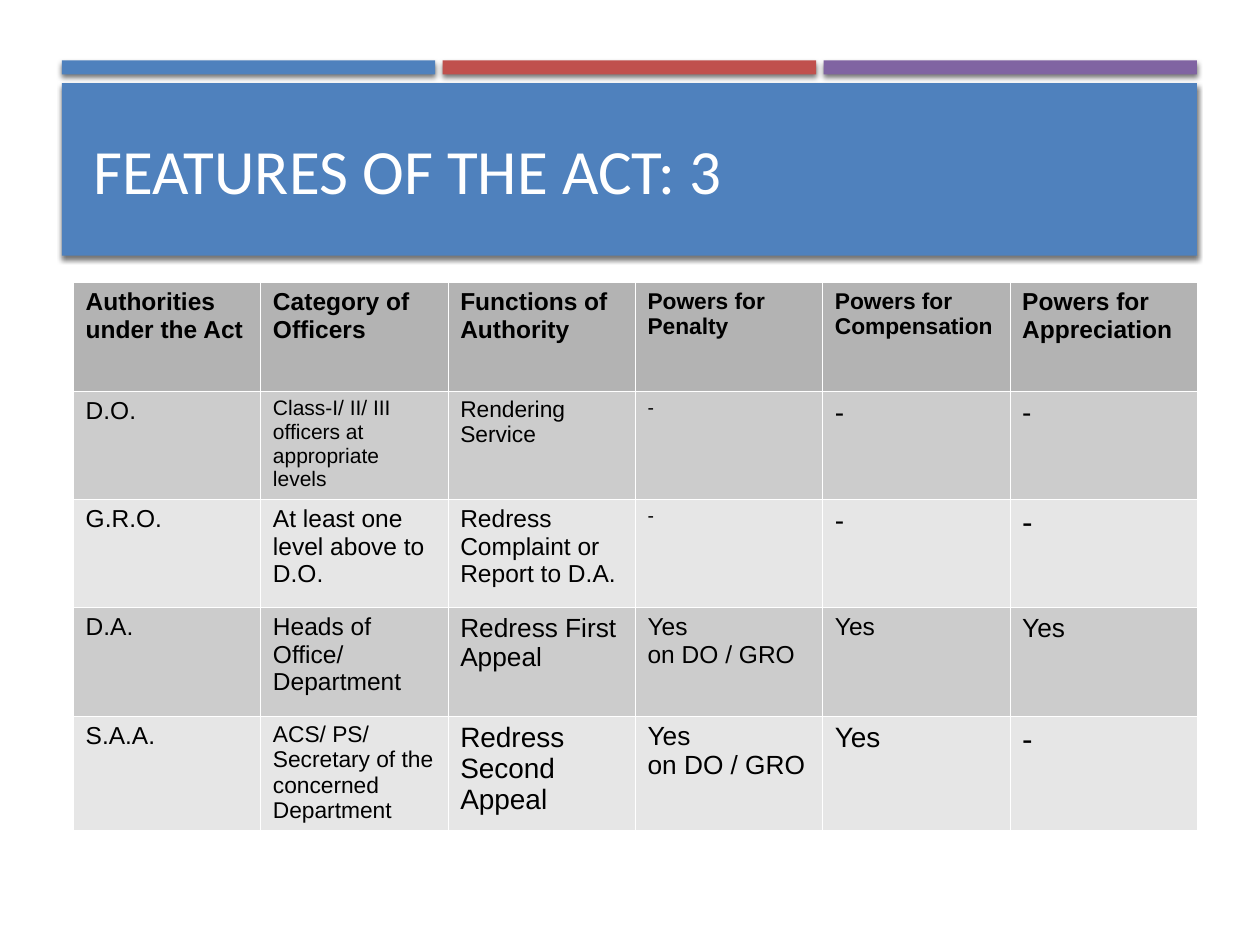
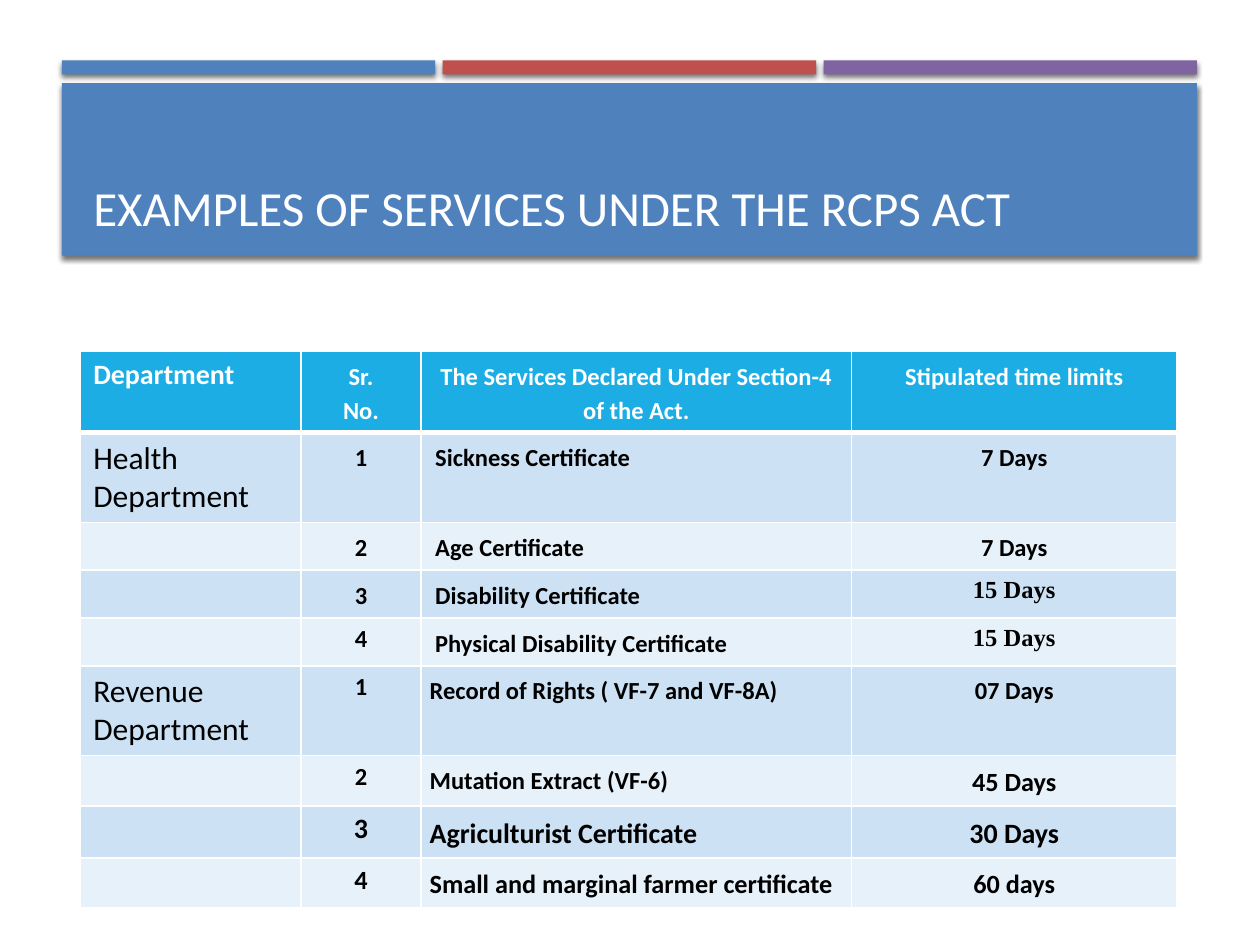
from lxml import etree
from pptx import Presentation
from pptx.dml.color import RGBColor
from pptx.enum.shapes import MSO_SHAPE
from pptx.enum.text import MSO_ANCHOR, MSO_AUTO_SIZE, PP_ALIGN
from pptx.oxml.ns import qn
from pptx.util import Inches, Pt

RECTANGLE = MSO_SHAPE.RECTANGLE
MIDDLE, BOTTOM = MSO_ANCHOR.MIDDLE, MSO_ANCHOR.BOTTOM
LEFT, CENTER = PP_ALIGN.LEFT, PP_ALIGN.CENTER
NO_AUTOFIT = MSO_AUTO_SIZE.NONE

WHITE = RGBColor(0xFF, 0xFF, 0xFF)
BLACK = RGBColor(0, 0, 0)
BLUE = RGBColor(0x4F, 0x81, 0xBD)
RED = RGBColor(0xC0, 0x50, 0x4D)
PURPLE = RGBColor(0x80, 0x64, 0xA2)
HEADER_GREY = RGBColor(0xB3, 0xB3, 0xB3)
DARK_GREY = RGBColor(0xCC, 0xCC, 0xCC)
LIGHT_GREY = RGBColor(0xE6, 0xE6, 0xE6)
HEADER_SKY = RGBColor(0x1C, 0xAD, 0xE4)
DARK_SKY = RGBColor(0xCC, 0xE2, 0xF4)
LIGHT_SKY = RGBColor(0xE7, 0xF1, 0xF9)

SANS, BODY, SERIF = "Arial", "Calibri", "Times New Roman"
TITLE_ONLY = 5
HEADER_BOX = (0.49, 0.48, 9.01, 1.55)
BAR_HEIGHT, BAR_GAP, BAND_OFFSET = 0.11, 0.06, 0.18

AUTHORITIES = [
    [("Authorities under the Act", 14), ("Category of Officers", 14),
     ("Functions of Authority", 14), ("Powers for Penalty", 13),
     ("Powers for Compensation", 13), ("Powers for Appreciation", 14)],
    [("D.O.", 14), ("Class-I/ II/ III officers at appropriate levels", 12),
     ("Rendering Service", 13), ("-", 11), ("-", 16), ("-", 16)],
    [("G.R.O.", 14), ("At least one level above to D.O.", 14),
     ("Redress Complaint or Report to D.A.", 14), ("-", 11), ("-", 16), ("-", 18)],
    [("D.A.", 14), ("Heads of Office/ Department", 14),
     ("Redress First Appeal", 15), ("Yes\non DO / GRO", 14), ("Yes", 14), ("Yes", 15)],
    [("S.A.A.", 14), ("ACS/ PS/ Secretary of the concerned Department", 13),
     ("Redress Second Appeal", 16), ("Yes\non DO / GRO", 15), ("Yes", 16), ("-", 18)],
]

SERVICES = [
    [("Department", 16), ("Sr.\nNo.", 14),
     ("The Services Declared Under Section-4 of the Act.", 14),
     ("Stipulated time limits", 14)],
    [("Health Department", 18), ("1", 14), (" Sickness Certificate", 14), ("7 Days", 14)],
    [("", 14), ("2", 14), (" Age Certificate", 14), ("7 Days", 14)],
    [("", 14), ("3", 14), (" Disability Certificate", 14), ("15 Days", 14)],
    [("", 14), ("4", 14), (" Physical Disability Certificate", 14), ("15 Days", 14)],
    [("Revenue Department", 18), ("1", 14),
     ("Record of Rights ( VF-7 and VF-8A)", 14), ("07 Days", 14)],
    [("", 14), ("2", 14), ("Mutation Extract (VF-6)", 14), ("45 Days", 15)],
    [("", 14), ("3", 16), ("Agriculturist Certificate", 16), ("30 Days", 16)],
    [("", 14), ("4", 15), ("Small and marginal farmer certificate", 15), ("60 days", 15)],
]


def add_band(slide, box, color):
    band = slide.shapes.add_shape(RECTANGLE, *map(Inches, box))
    band.shadow.inherit = False
    band.fill.solid()
    band.fill.fore_color.rgb = color
    band.line.fill.background()
    effects = band._element.spPr.find(qn("a:effectLst"))
    shadow = etree.SubElement(effects, qn("a:outerShdw"), blurRad=str(Pt(3)),
                              dist=str(Pt(2)), dir="5400000", rotWithShape="0")
    black = etree.SubElement(shadow, qn("a:srgbClr"), val=str(BLACK))
    etree.SubElement(black, qn("a:alpha"), val="55000")


def add_header(slide, box, heading, size, anchor):
    left, top, width, height = box
    accents = (BLUE, RED, PURPLE)
    bar_width = (width - BAR_GAP * (len(accents) - 1)) / len(accents)
    for index, color in enumerate(accents):
        bar_left = left + index * (bar_width + BAR_GAP)
        add_band(slide, (bar_left, top, bar_width, BAR_HEIGHT), color)
    add_band(slide, (left, top + BAND_OFFSET, width, height - BAND_OFFSET), BLUE)

    title = slide.shapes.title
    slide.shapes._spTree.append(title._element)
    title.left, title.top = Inches(left + 0.15), Inches(top + 0.27)
    title.width, title.height = Inches(width - 0.28), Inches(height - 0.37)
    frame = title.text_frame
    frame.text = heading
    frame.word_wrap = True
    frame.auto_size = NO_AUTOFIT
    frame.vertical_anchor = anchor
    paragraph = frame.paragraphs[0]
    paragraph.alignment = LEFT
    style_run(paragraph.runs[0], size, BODY, WHITE, False)


def style_run(run, size, face, color, bold):
    run.font.size = Pt(size)
    run.font.name = face
    run.font.color.rgb = color
    run.font.bold = bold


def set_borders(cell, widths):
    properties = cell._tc.get_or_add_tcPr()
    for position, (side, width) in enumerate(widths.items()):
        line = etree.Element(qn(f"a:ln{side}"), w=str(Pt(width)))
        fill = etree.SubElement(line, qn("a:solidFill"))
        etree.SubElement(fill, qn("a:srgbClr"), val=str(WHITE))
        properties.insert(position, line)


def add_grid(slide, origin, column_widths, row_heights, content, fills, border,
             header_border, cell_style):
    left, top = origin
    frame = slide.shapes.add_table(
        len(row_heights), len(column_widths), Inches(left), Inches(top),
        Inches(sum(column_widths)), Inches(sum(row_heights)))
    grid = frame.table
    grid.first_row = grid.horz_banding = False
    for column, width in zip(grid.columns, column_widths):
        column.width = Inches(width)
    for row, height in zip(grid.rows, row_heights):
        row.height = Inches(height)

    header_fill, *stripes = fills
    for row, entries in enumerate(content):
        for column, (text, size) in enumerate(entries):
            cell = grid.cell(row, column)
            cell.fill.solid()
            cell.fill.fore_color.rgb = stripes[(row - 1) % 2] if row else header_fill
            set_borders(cell, {
                "L": border, "R": border,
                "T": header_border if row == 1 else border,
                "B": header_border if row == 0 else border})
            fill_cell(cell, text, size, **cell_style(row, column))


def fill_cell(cell, text, size, face, color, bold, alignment=LEFT, spacing=1.0,
              side_margin=0.1):
    cell.margin_left = cell.margin_right = Inches(side_margin)
    cell.margin_top = cell.margin_bottom = Inches(0.05)
    cell.text_frame.text = text
    for paragraph in cell.text_frame.paragraphs:
        paragraph.alignment = alignment
        paragraph.line_spacing = spacing
        for run in paragraph.runs:
            style_run(run, size, face, color, bold)
        if not text:
            etree.SubElement(paragraph._p, qn("a:endParaRPr"), sz=str(size * 100))


def authority_style(row, column):
    return {"face": SANS, "color": BLACK, "bold": row == 0}


def service_style(row, column):
    department, number, service, limit = range(4)
    serif = column == limit and row in (3, 4)
    roomy = column == department or (column == number and row >= 4)
    return {
        "face": SERIF if serif else BODY,
        "color": BLACK if row else WHITE,
        "bold": row == 0 or column != department,
        "alignment": CENTER if column in (number, limit)
        or (column == service and row == 0) else LEFT,
        "spacing": 1.0 if roomy or serif else 1.15,
        "side_margin": 0.1 if roomy else 0.07,
    }


def build_authorities(slide):
    add_header(slide, HEADER_BOX, "FEATURES OF THE ACT: 3", 36, MIDDLE)
    add_grid(slide, (0.58, 2.24), [1.487] * 6, [0.86] * 4 + [0.9], AUTHORITIES,
             (HEADER_GREY, DARK_GREY, LIGHT_GREY), 0.06, 0.06, authority_style)


def build_services(slide):
    add_header(slide, HEADER_BOX, "EXAMPLES OF SERVICES UNDER THE RCPS ACT", 28, BOTTOM)
    add_grid(slide, (0.64, 2.79), [1.75, 0.95, 3.42, 2.58],
             [0.64, 0.71, 0.38, 0.38, 0.38, 0.71, 0.4, 0.41, 0.4], SERVICES,
             (HEADER_SKY, DARK_SKY, LIGHT_SKY), 0.96, 3, service_style)


def main():
    presentation = Presentation()
    presentation.slide_width, presentation.slide_height = Inches(10), Inches(7.5)
    for build in (build_authorities, build_services):
        build(presentation.slides.add_slide(presentation.slide_layouts[TITLE_ONLY]))
    presentation.save("out.pptx")


if __name__ == "__main__":
    main()
